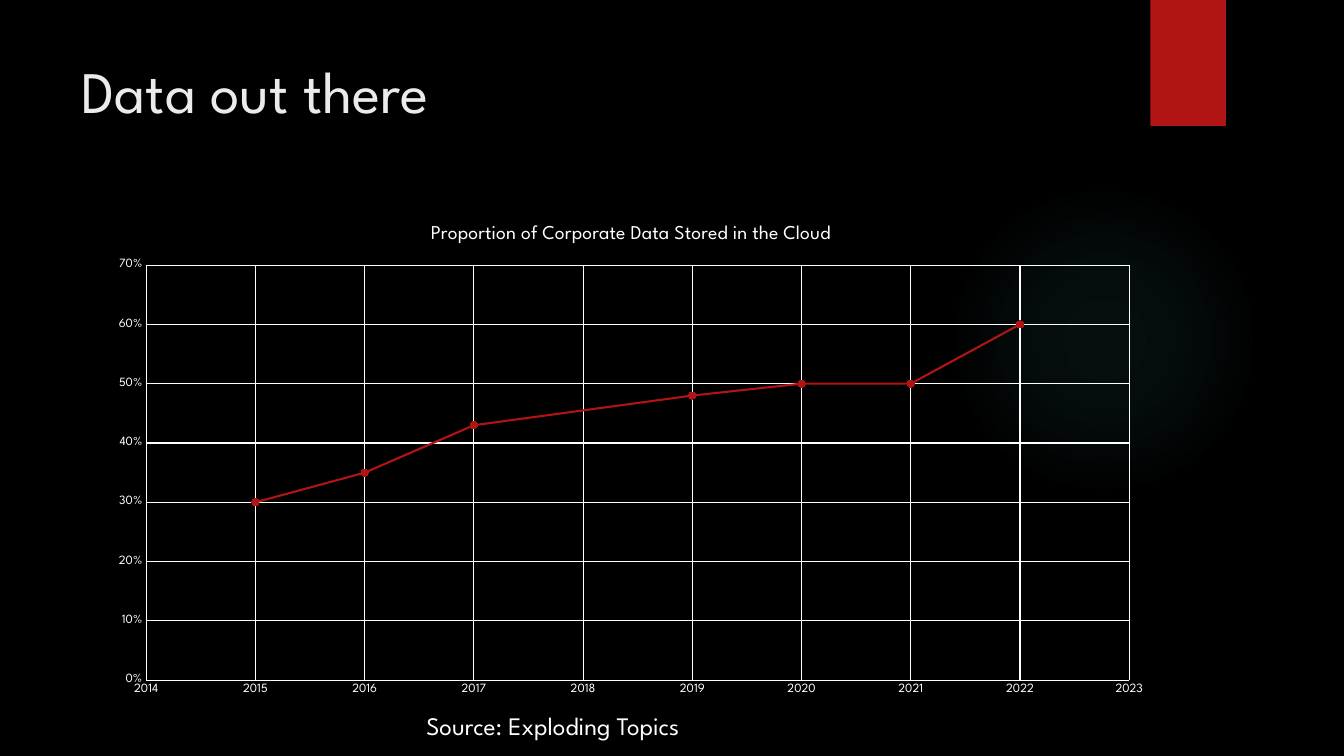
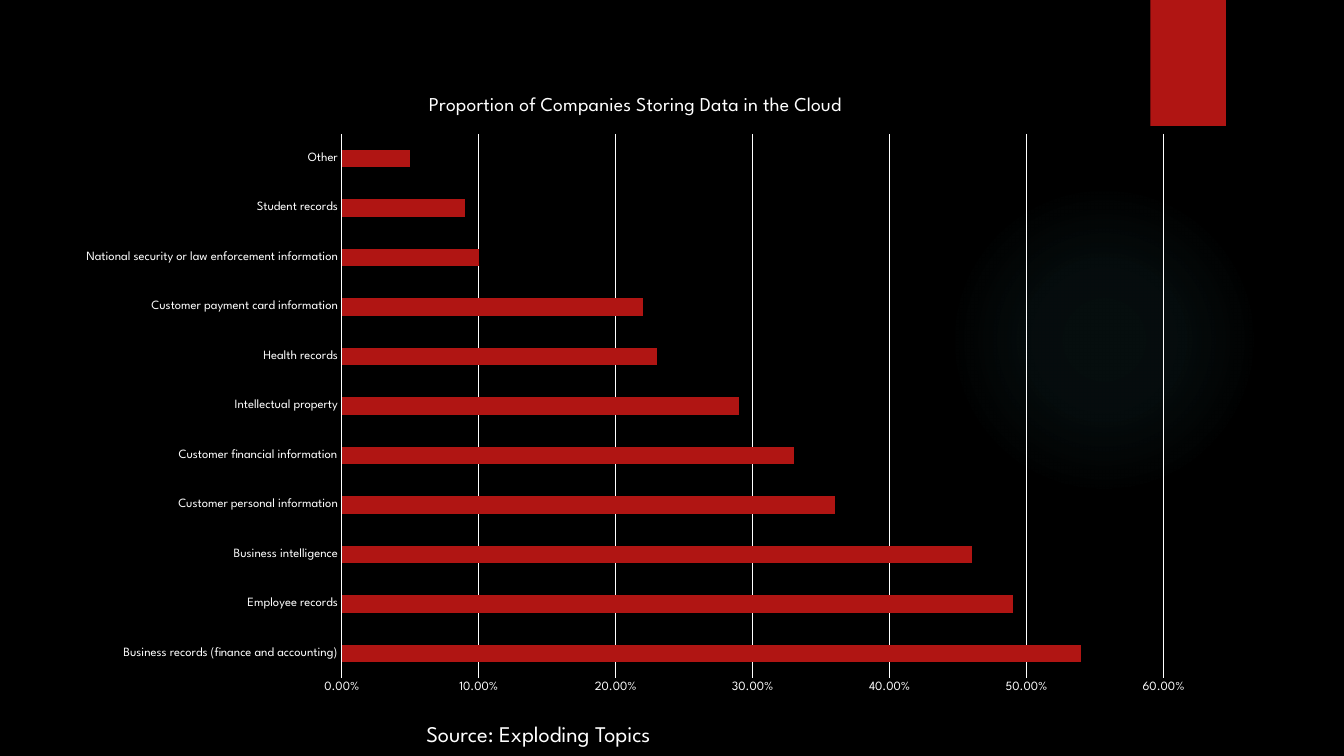
from pptx import Presentation
from pptx.chart.data import CategoryChartData, XyChartData
from pptx.dml.color import RGBColor
from pptx.enum import chart as ch, shapes, text
from pptx.oxml import parse_xml
from pptx.oxml.ns import nsdecls
from pptx.util import Inches, Pt


class Theme:
    font = "League Spartan"
    back = RGBColor.from_string("000000")
    accent = RGBColor.from_string("B01513")
    title = RGBColor.from_string("EBEBEB")
    body = RGBColor.from_string("FFFFFF")
    glow = "50B9C1"
    glow_stops = [(0, 7), (36, 6), (69, 0)]  # position %, opacity %
    title_pt, chart_title_pt, chart_pt, axis_pt = 42, 14, 10, 9
    source_pt, small_source_pt = 18, 16
    line_pt, series_pt = 0.75, 1.5


# Content
SOURCE = "Source: Exploding Topics"
GROWTH = {
    "title": "Proportion of Corporate Data Stored in the Cloud",
    "points": [(2015, 0.30), (2016, 0.35), (2017, 0.43), (2019, 0.48),
               (2020, 0.50), (2021, 0.50), (2022, 0.60)],
    "frame": (0.97, 2.03, 10.58, 4.97),
    "plot": (1.45, 2.63, 9.75, 4.12),
}
RECORDS = {
    "title": "Proportion of Companies Storing Data in the Cloud",
    "points": [
        ("Business records (finance and accounting)", 0.54),
        ("Employee records", 0.49),
        ("Business intelligence", 0.46),
        ("Customer personal information", 0.36),
        ("Customer financial information", 0.33),
        ("Intellectual property", 0.29),
        ("Health records", 0.23),
        ("Customer payment card information", 0.22),
        ("National security or law enforcement information", 0.10),
        ("Student records", 0.09),
        ("Other", 0.05),
    ],
    "frame": (0.63, 0.73, 11.35, 6.28),
    "plot": (3.39, 1.33, 8.15, 5.4),
}


# Shared helpers
def style_font(font, size, color=Theme.body):
    font.name, font.size, font.bold = Theme.font, Pt(size), False
    font.color.rgb = color


def style_line(line, width=Theme.line_pt, color=Theme.body):
    line.color.rgb = color
    line.width = Pt(width)


def fill_accent(fill):
    fill.solid()
    fill.fore_color.rgb = Theme.accent


def add_text(s, words, at, size, color=Theme.body):
    tf = s.shapes.add_textbox(*map(Inches, at)).text_frame
    tf.word_wrap = True
    tf.vertical_anchor = text.MSO_ANCHOR.TOP
    r = tf.paragraphs[0].add_run()
    r.text = words
    style_font(r.font, size, color)


def add_plain(s, kind, at):
    sp = s.shapes.add_shape(kind, *map(Inches, at))
    sp.shadow.inherit = False
    sp.line.fill.background()
    fill_accent(sp.fill)
    return sp


def add_slide(prs):
    """A slide with the soft glow and the red tab."""
    s = prs.slides.add_slide(prs.slide_layouts[6])
    glow = add_plain(s, shapes.MSO_SHAPE.OVAL, (9.41, 1.83, 3.08, 3.08))
    stops = "".join(
        f'<a:gs pos="{pos * 1000}"><a:srgbClr val="{Theme.glow}">'
        f'<a:alpha val="{alpha * 1000}"/></a:srgbClr></a:gs>'
        for pos, alpha in Theme.glow_stops)
    solid = glow.element.spPr.find("{*}solidFill")
    solid.getparent().replace(solid, parse_xml(
        f'<a:gradFill {nsdecls("a")}><a:gsLst>{stops}</a:gsLst>'
        '<a:path path="circle"><a:fillToRect l="50000" t="50000" r="50000" '
        'b="50000"/></a:path></a:gradFill>'))
    add_plain(s, shapes.MSO_SHAPE.RECTANGLE, (11.41, 0, 0.75, 1.25))
    return s


def style_axis(axis, number_format=None, low=None, high=None, step=None):
    axis.major_tick_mark = axis.minor_tick_mark = ch.XL_TICK_MARK.NONE
    style_font(axis.tick_labels.font, Theme.axis_pt)
    style_line(axis.format.line)
    axis.has_major_gridlines = number_format is not None
    if number_format:
        axis.minimum_scale, axis.maximum_scale = low, high
        axis.major_unit = step
        axis.tick_labels.number_format = number_format
        axis.tick_labels.number_format_is_linked = False
        style_line(axis.major_gridlines.format.line)


def add_chart(s, kind, spec, data):
    frame, plot = spec["frame"], spec["plot"]
    chart = s.shapes.add_chart(kind, *map(Inches, frame), data).chart
    style_font(chart.font, Theme.chart_pt)
    chart.has_legend = False
    chart.has_title = True
    r = chart.chart_title.text_frame.paragraphs[0].add_run()
    r.text = spec["title"]
    style_font(r.font, Theme.chart_title_pt)
    chart.plots[0].vary_by_categories = False

    # Inner plot area as fractions of the chart frame
    parts = {
        "x": (plot[0] - frame[0]) / frame[2],
        "y": (plot[1] - frame[1]) / frame[3],
        "w": plot[2] / frame[2],
        "h": plot[3] / frame[3],
    }
    modes = '<c:xMode val="edge"/><c:yMode val="edge"/>'
    sizes = "".join(f'<c:{k} val="{v:.4f}"/>' for k, v in parts.items())
    area = chart._chartSpace.chart.plotArea
    for old in area.findall("{*}layout"):
        area.remove(old)
    area.insert(0, parse_xml(
        f'<c:layout {nsdecls("c")}><c:manualLayout>'
        f'<c:layoutTarget val="inner"/>{modes}{sizes}'
        '</c:manualLayout></c:layout>'))
    return chart


# Slides
def growth_slide(prs):
    s = add_slide(prs)
    add_text(s, "Data out there", (0.71, 0.49, 10.29, 1.53),
             Theme.title_pt, Theme.title)
    data = XyChartData()
    series = data.add_series(GROWTH["title"])
    for year, share in GROWTH["points"]:
        series.add_data_point(year, share)
    chart = add_chart(s, ch.XL_CHART_TYPE.XY_SCATTER_LINES, GROWTH, data)
    style_axis(chart.category_axis, "0", 2014, 2023, 1)
    style_axis(chart.value_axis, "0%", 0, 0.7, 0.1)
    line = chart.plots[0].series[0]
    line.smooth = False
    style_line(line.format.line, Theme.series_pt, Theme.accent)
    line.marker.style = ch.XL_MARKER_STYLE.CIRCLE
    line.marker.size = 5
    fill_accent(line.marker.format.fill)
    style_line(line.marker.format.line, Theme.line_pt, Theme.accent)
    add_text(s, SOURCE, (4.13, 7, 3.43, 0.4), Theme.source_pt)


def records_slide(prs):
    s = add_slide(prs)
    names, shares = zip(*RECORDS["points"])
    data = CategoryChartData()
    data.categories = names
    data.add_series(RECORDS["title"], shares)
    chart = add_chart(s, ch.XL_CHART_TYPE.BAR_CLUSTERED, RECORDS, data)
    style_axis(chart.category_axis)
    style_axis(chart.value_axis, "0.00%", 0, 0.6, 0.1)
    chart.value_axis.format.line.fill.background()
    chart.plots[0].gap_width = 182
    fill_accent(chart.plots[0].series[0].format.fill)
    add_text(s, SOURCE, (4.13, 7.1, 3.43, 0.37), Theme.small_source_pt)


def main():
    prs = Presentation()
    prs.slide_width, prs.slide_height = Inches(13.33), Inches(7.5)
    fill = prs.slide_master.background.fill
    fill.solid()
    fill.fore_color.rgb = Theme.back
    growth_slide(prs)
    records_slide(prs)
    prs.save("out.pptx")


if __name__ == "__main__":
    main()
